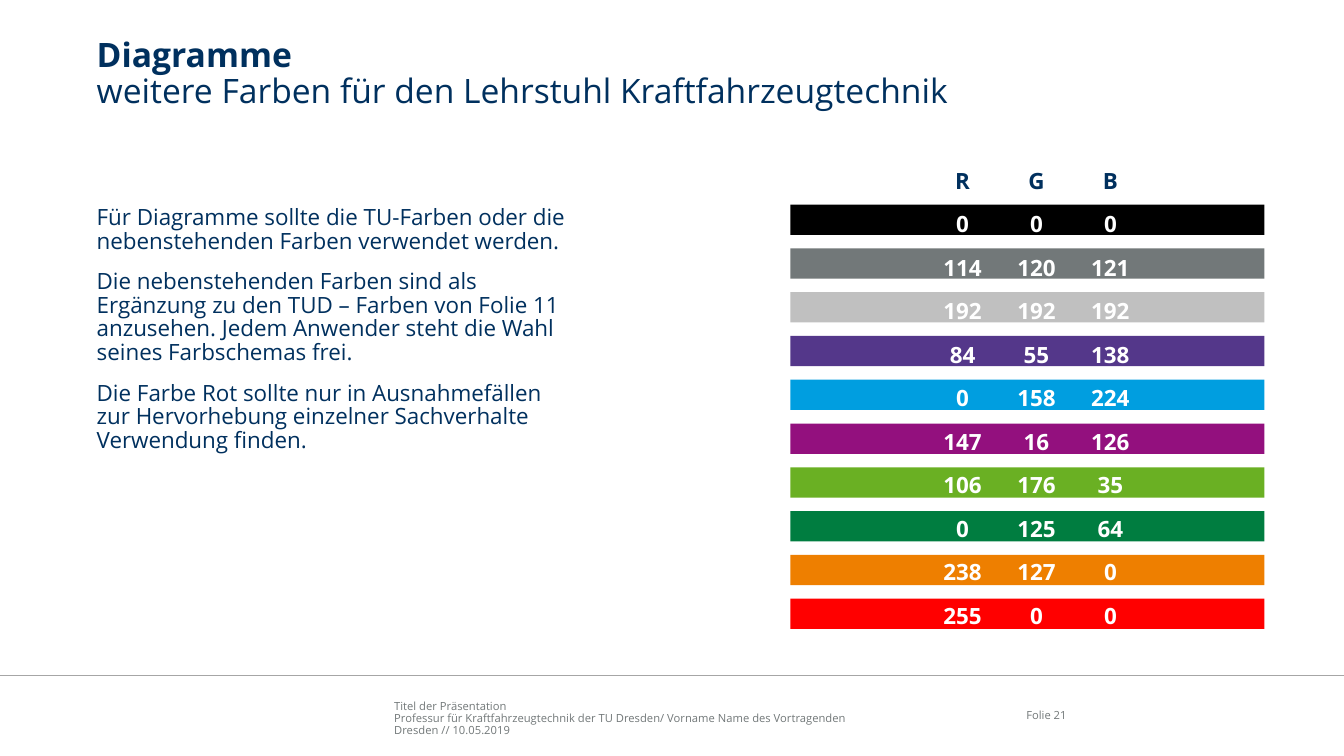
from dataclasses import dataclass

from lxml.etree import SubElement
from pptx import Presentation
from pptx.dml.color import RGBColor
from pptx.enum.shapes import MSO_CONNECTOR, MSO_SHAPE
from pptx.enum.text import MSO_ANCHOR as Anchor, PP_ALIGN as Align
from pptx.oxml.ns import qn
from pptx.util import Inches, Pt


@dataclass(frozen=True)
class Theme:
    font: str = "Open Sans"
    navy: RGBColor = RGBColor(0, 48, 94)
    gray: RGBColor = RGBColor(114, 120, 121)
    rule: RGBColor = RGBColor(166, 166, 166)
    white: RGBColor = RGBColor(255, 255, 255)
    title_size: int = 24
    body_size: int = 16
    footer_size: int = 8


THEME = Theme()
PLAIN_TABLE_STYLE = "{2D5ABB26-0587-4C30-8999-92F81FD0307C}"
BODY = [
    "Für Diagramme sollte die TU-Farben oder die nebenstehenden Farben verwendet werden.",
    "Die nebenstehenden Farben sind als Ergänzung zu den TUD – Farben von Folie 11 "
    "anzusehen. Jedem Anwender steht die Wahl seines Farbschemas frei.",
    "Die Farbe Rot sollte nur in Ausnahmefällen zur Hervorhebung einzelner "
    "Sachverhalte Verwendung finden.",
]
FOOTER = [
    "Titel der Präsentation",
    "Professur für Kraftfahrzeugtechnik der TU Dresden/ Vorname Name des Vortragenden",
    "Dresden // 10.05.2019",
]
CHART_COLORS = [
    (0, 0, 0),
    (114, 120, 121),
    (192, 192, 192),
    (84, 55, 138),
    (0, 158, 224),
    (147, 16, 126),
    (106, 176, 35),
    (0, 125, 64),
    (238, 127, 0),
    (255, 0, 0),
]


def write(frame, paragraphs, *, size, color, bold_lines=0, align=Align.LEFT,
          spacing=0.88, gap=0):
    """Fill a text frame; the first bold_lines lines of each paragraph are bold."""
    for index, text in enumerate(paragraphs):
        para = frame.add_paragraph() if index else frame.paragraphs[0]
        para.alignment = align
        para.line_spacing = spacing
        para.space_before = Pt(gap if index else 0)
        for number, line in enumerate(text.split("\n")):
            if number:
                para.add_line_break()
            span = para.add_run()
            span.text = line
            span.font.name = THEME.font
            span.font.size = Pt(size)
            span.font.color.rgb = color
            span.font.bold = number < bold_lines


def add_text(page, left, top, width, height, paragraphs, *, anchor=Anchor.TOP, **style):
    box = page.shapes.add_textbox(Inches(left), Inches(top), Inches(width), Inches(height))
    frame = box.text_frame
    frame.word_wrap = True
    frame.vertical_anchor = anchor
    frame.margin_left = frame.margin_right = frame.margin_top = frame.margin_bottom = 0
    write(frame, paragraphs, **style)


def add_footer_rule(page, top, width):
    rule = page.shapes.add_connector(
        MSO_CONNECTOR.STRAIGHT, 0, Inches(top), Inches(width), Inches(top))
    rule.line.color.rgb = THEME.rule
    rule.line.width = Pt(1)
    SubElement(rule.element.spPr, qn("a:effectLst"))


def add_color_bars(page, left, top, width, height, pitch):
    group = page.shapes.add_group_shape()
    for row, color in enumerate(CHART_COLORS):
        bar = group.shapes.add_shape(
            MSO_SHAPE.RECTANGLE, Inches(left), Inches(top + row * pitch),
            Inches(width), Inches(height))
        bar.shadow.inherit = False
        bar.fill.solid()
        bar.fill.fore_color.rgb = RGBColor(*color)
        bar.line.fill.background()


def add_rgb_table(page, left, top, width, height):
    rows = ["RGB", *CHART_COLORS]
    frame = page.shapes.add_table(
        len(rows), 3, Inches(left), Inches(top), Inches(width), Inches(height))
    table = frame.table
    table.first_row = table.horz_banding = False
    frame.element.find(".//" + qn("a:tableStyleId")).text = PLAIN_TABLE_STYLE
    for row, values in enumerate(rows):
        for column, value in enumerate(values):
            cell = table.cell(row, column)
            cell.fill.background()
            write(cell.text_frame, [str(value)], size=THEME.body_size,
                  color=THEME.white if row else THEME.navy,
                  bold_lines=1, align=Align.CENTER, spacing=1.0)


def main():
    deck = Presentation()
    deck.slide_width, deck.slide_height = Inches(13.33), Inches(7.5)
    page = deck.slides.add_slide(deck.slide_layouts[6])

    footer_style = dict(size=THEME.footer_size, color=THEME.gray)
    add_text(page, 3.91, 6.91, 5.67, 0.4, FOOTER, anchor=Anchor.BOTTOM, **footer_style)
    add_footer_rule(page, 6.7, 13.33)
    add_text(page, 9.81, 6.9, 0.77, 0.4, ["Folie 21"], anchor=Anchor.MIDDLE,
             align=Align.RIGHT, **footer_style)

    add_color_bars(page, 7.84, 2.03, 4.7, 0.3, pitch=0.43 + 0.04 / 9)
    add_text(page, 0.96, 0.38, 11.57, 0.75,
             ["Diagramme\nweitere Farben für den Lehrstuhl Kraftfahrzeugtechnik"],
             size=THEME.title_size, color=THEME.navy, bold_lines=1, spacing=0.9)
    add_text(page, 0.96, 2.05, 4.7, 4.22, BODY,
             size=THEME.body_size, color=THEME.navy, gap=12)
    add_rgb_table(page, 9.18, 1.59, 2.2, 4.75)

    deck.save("out.pptx")


if __name__ == "__main__":
    main()
